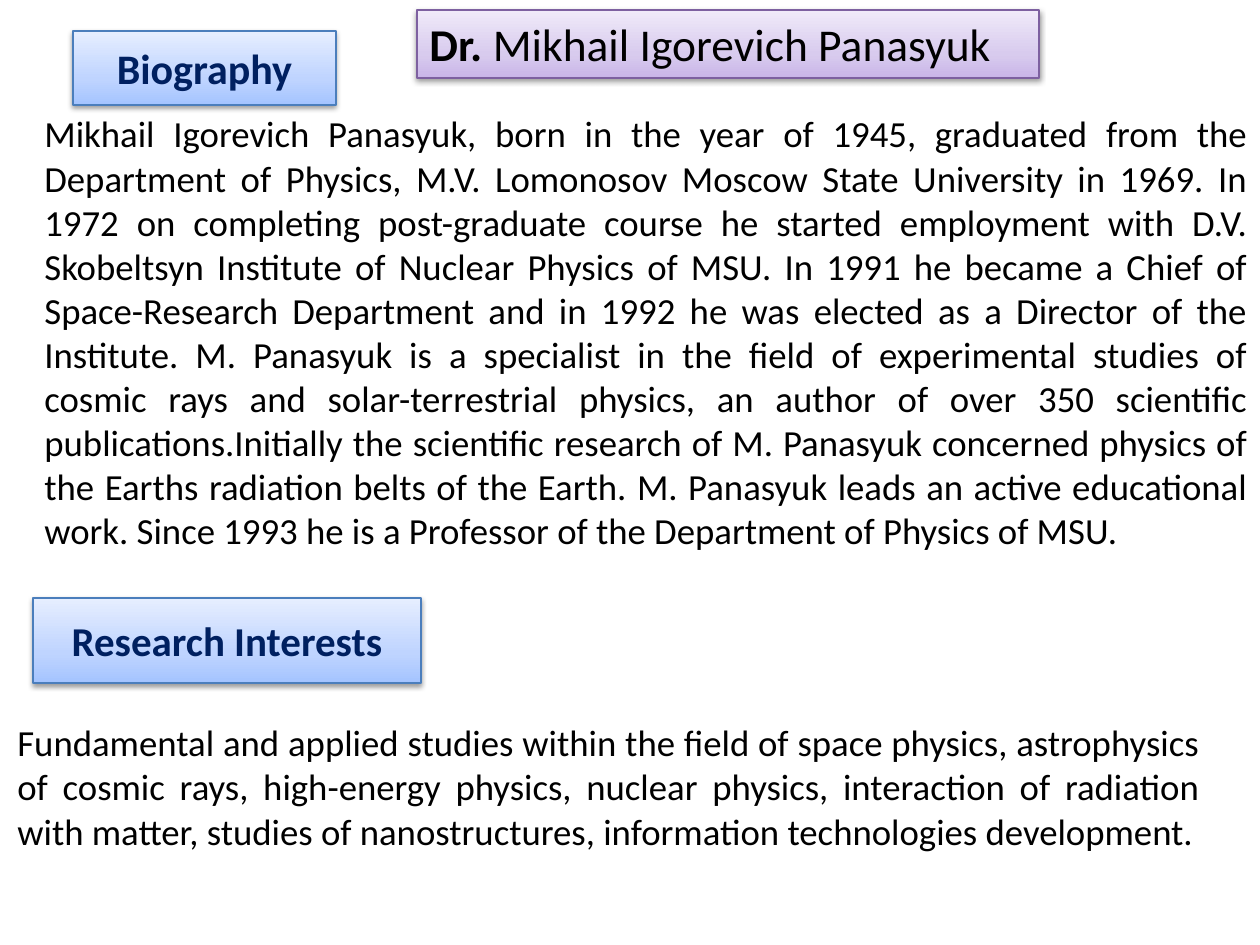
from dataclasses import dataclass

from lxml import etree
from pptx import Presentation
from pptx.dml.color import RGBColor
from pptx.enum import shapes, text
from pptx.oxml import ns
from pptx.util import Emu, Pt

EMU_PER_PX = 914400 / 126


@dataclass(frozen=True)
class Theme:
    font: str = "Calibri"
    ink: str = "000000"
    heading_ink: str = "002060"
    blue_stops: tuple = ((0, "A4C4FF"), (35, "BFD4FF"), (100, "E6EEFF"))
    blue_line: str = "4B7EBC"
    purple_stops: tuple = ((0, "C9B5E8"), (35, "D8CBEE"), (100, "F0EAF9"))
    purple_line: str = "7D60A0"
    body_size: float = 21
    name_size: float = 26
    biography_size: float = 24
    interests_size: float = 23.4


THEME = Theme()

BIOGRAPHY = (
    "Mikhail Igorevich Panasyuk, born in the year of 1945, graduated from the "
    "Department of Physics, M.V. Lomonosov Moscow State University in 1969. "
    "In 1972 on completing post-graduate course he started employment with "
    "D.V. Skobeltsyn Institute of Nuclear Physics of MSU. In 1991 he became "
    "a Chief of Space-Research Department and in 1992 he was elected as a "
    "Director of the Institute. M. Panasyuk is a specialist in the field of "
    "experimental studies of cosmic rays and solar-terrestrial physics, an "
    "author of over 350 scientific publications.Initially the scientific "
    "research of M. Panasyuk concerned physics of the Earths radiation belts "
    "of the Earth. M. Panasyuk leads an active educational work. Since 1993 "
    "he is a Professor of the Department of Physics of MSU."
)
INTERESTS = (
    "Fundamental and applied studies within the field of space physics, "
    "astrophysics of cosmic rays, high-energy physics, nuclear physics, "
    "interaction of radiation with matter, studies of nanostructures, "
    "information technologies development."
)


def px(length):
    return Emu(round(length * EMU_PER_PX))


def add_element(parent, tag, **attributes):
    element = etree.SubElement(parent, ns.qn(tag))
    for key, value in attributes.items():
        element.set(key, str(value))
    return element


def add_color(parent, color):
    return add_element(parent, "a:srgbClr", val=color)


def apply_gradient(panel, stops):
    panel.fill.gradient()
    gradient = panel._element.spPr.find(ns.qn("a:gradFill"))
    stop_list = gradient.find(ns.qn("a:gsLst"))
    for stop in list(stop_list):
        stop_list.remove(stop)
    for position, color in stops:
        add_color(add_element(stop_list, "a:gs", pos=position * 1000), color)
    gradient.find(ns.qn("a:lin")).set("ang", str(270 * 60000))


def apply_shadow(panel):
    panel.shadow.inherit = False
    effects = panel._element.spPr.find(ns.qn("a:effectLst"))
    shadow = add_element(effects, "a:outerShdw", blurRad=Pt(3.1), dist=Pt(1.6),
                         dir=90 * 60000, rotWithShape=0)
    add_element(add_color(shadow, "000000"), "a:alpha", val=38000)


def style_paragraph(paragraph, size, color, align):
    paragraph.alignment = align
    paragraph.font.name = THEME.font
    paragraph.font.size = Pt(size)
    paragraph.font.color.rgb = RGBColor.from_string(color)


def add_panel(slide, box, stops, line_color):
    panel = slide.shapes.add_shape(shapes.MSO_SHAPE.RECTANGLE, *map(px, box))
    apply_gradient(panel, stops)
    panel.line.color.rgb = RGBColor.from_string(line_color)
    panel.line.width = Pt(0.75)
    apply_shadow(panel)
    panel.text_frame.word_wrap = True
    return panel.text_frame


def add_heading(slide, box, wording, size):
    frame = add_panel(slide, box, THEME.blue_stops, THEME.blue_line)
    frame.vertical_anchor = text.MSO_ANCHOR.MIDDLE
    heading = frame.paragraphs[0]
    heading.text = wording
    style_paragraph(heading, size, THEME.heading_ink, text.PP_ALIGN.CENTER)
    heading.font.bold = True


def add_name(slide, box, title, person):
    frame = add_panel(slide, box, THEME.purple_stops, THEME.purple_line)
    frame.vertical_anchor = text.MSO_ANCHOR.TOP
    frame.auto_size = text.MSO_AUTO_SIZE.SHAPE_TO_FIT_TEXT
    name = frame.paragraphs[0]
    style_paragraph(name, THEME.name_size, THEME.ink, text.PP_ALIGN.LEFT)
    for wording, bold in ((title, True), (person, False)):
        run = name.add_run()
        run.text = wording
        run.font.bold = bold


def add_body(slide, box, wording):
    frame = slide.shapes.add_textbox(*map(px, box)).text_frame
    frame.word_wrap = True
    frame.auto_size = text.MSO_AUTO_SIZE.SHAPE_TO_FIT_TEXT
    body = frame.paragraphs[0]
    body.text = wording
    style_paragraph(body, THEME.body_size, THEME.ink, text.PP_ALIGN.JUSTIFY)


def main():
    deck = Presentation()
    deck.slide_width, deck.slide_height = px(1260), px(945)
    slide = deck.slides.add_slide(deck.slide_layouts[6])
    add_heading(slide, (73, 31, 263, 74), "Biography", THEME.biography_size)
    add_body(slide, (32, 105, 1228, 503), BIOGRAPHY)
    add_name(slide, (417, 10, 622, 68), "Dr. ", "Mikhail Igorevich Panasyuk")
    add_body(slide, (5, 714, 1207, 190), INTERESTS)
    add_heading(slide, (33, 598, 388, 85), "Research Interests",
                THEME.interests_size)
    deck.save("out.pptx")


if __name__ == "__main__":
    main()
